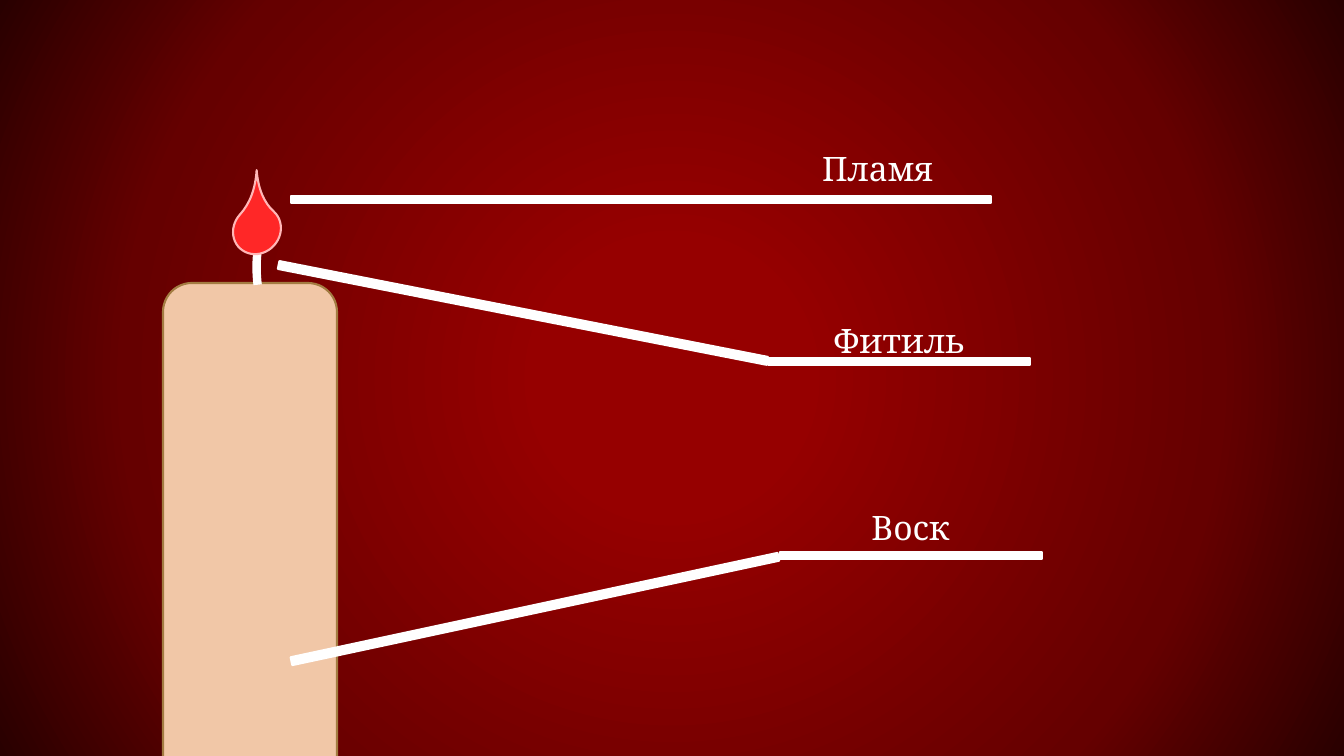
from pptx import Presentation
from pptx.dml.color import RGBColor
from pptx.enum.shapes import MSO_SHAPE as Preset
from pptx.enum.text import MSO_AUTO_SIZE as AutoSize, PP_ALIGN as Align
from pptx.oxml import parse_xml
from pptx.oxml.ns import nsdecls
from pptx.util import Emu, Pt

EMU_PER_PX = 914400 / 100.8
WHITE = "FFFFFF"
BACKDROP = [(17, "960000"), (71, "650000"), (100, "290000")]
POINTERS = [
    (274, 309, 498, 8, 11.1),
    (768, 358, 262, 7, 0),
    (291, 196, 700, 7, 0),
    (286, 605, 498, 8, 347.9),
    (780, 552, 262, 7, 0),
]
LABELS = [
    ("Фитиль", 799, 315, 50),
    ("Пламя", 777, 143, 92),
    ("Воск", 810, 502, 50),
]


def px(*lengths):
    return [Emu(round(length * EMU_PER_PX)) for length in lengths]


def color(value):
    return RGBColor.from_string(value)


def apply_format(target, values):
    for name, value in values.items():
        setattr(target, name, value)


def paint_backdrop(page):
    page.background.fill.gradient()
    gradient = page.element.xpath(".//p:bgPr/a:gradFill")[0]
    stops = "".join(
        f'<a:gs pos="{percent * 1000}"><a:srgbClr val="{tone}"/></a:gs>'
        for percent, tone in BACKDROP
    )
    radial = parse_xml(
        f'<a:gradFill {nsdecls("a")} rotWithShape="1"><a:gsLst>{stops}</a:gsLst>'
        '<a:path path="circle"><a:fillToRect l="50000" t="50000" r="50000" b="50000"/>'
        "</a:path></a:gradFill>"
    )
    gradient.getparent().replace(gradient, radial)


def add_figure(page, preset, place, fill, line, width=1.5, rotation=0, adjustments=()):
    figure = page.shapes.add_shape(preset, *px(*place))
    figure.shadow.inherit = False
    figure.rotation = rotation
    for index, value in enumerate(adjustments):
        figure.adjustments[index] = value
    if fill:
        figure.fill.solid()
        figure.fill.fore_color.rgb = color(fill)
    else:
        figure.fill.background()
    figure.line.color.rgb = color(line)
    figure.line.width = Pt(width)
    return figure


def add_wick(page):
    wick = add_figure(page, Preset.ARC, (221, 259, 119, 46), None, WHITE, 6, 83.2, (162, 204.815))
    frame = wick.element.spPr.xfrm
    for flip in ("flipH", "flipV"):
        frame.set(flip, "1")


def add_label(page, text, left, top, height):
    box = page.shapes.add_textbox(*px(left, top, 201, height))
    apply_format(box.text_frame, {"word_wrap": True, "auto_size": AutoSize.SHAPE_TO_FIT_TEXT})
    para = box.text_frame.paragraphs[0]
    para.alignment = Align.CENTER
    span = para.add_run()
    span.text = text
    apply_format(span.font, {"name": "Cambria", "size": Pt(24)})
    span.font.color.rgb = color(WHITE)


def main():
    deck = Presentation()
    deck.slide_width, deck.slide_height = px(1344, 756)
    page = deck.slides.add_slide(deck.slide_layouts[6])
    paint_backdrop(page)
    add_figure(page, Preset.ROUNDED_RECTANGLE, (163, 283, 174, 572), "F1C7A7", "A37C42")
    add_wick(page)
    add_figure(page, Preset.TEAR, (232, 207, 50, 46), "FF2727", "FFB7B7",
               rotation=312.3, adjustments=(1.763,))
    for *place, rotation in POINTERS:
        add_figure(page, Preset.RECTANGLE, place, WHITE, WHITE, rotation=rotation)
    for label in LABELS:
        add_label(page, *label)
    deck.save("out.pptx")


if __name__ == "__main__":
    main()
